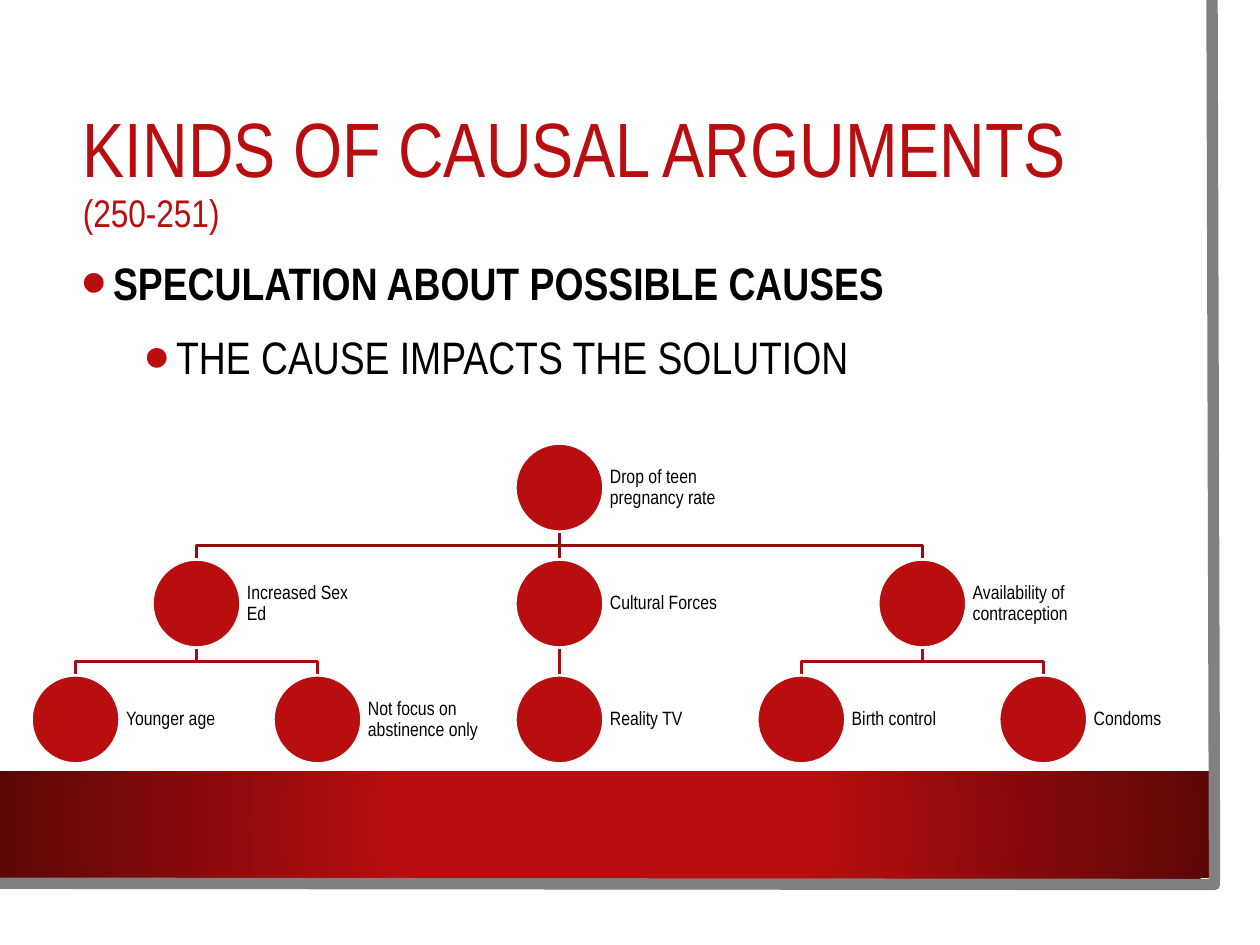
import pptx
import pptx.util
import pptx.dml.color
import pptx.enum.shapes
import pptx.enum.text
import pptx.oxml
from lxml import etree

FONT = "Arial Narrow"
RED, DARK_RED, WHITE, GREY, BLACK = "B80E0F", "5C0707", "FFFFFF", "808080", "000000"
TITLE = [("KINDS OF CAUSAL ARGUMENTS ", 44), ("(250-251)", 22)]
POINTS = [("SPECULATION ABOUT POSSIBLE CAUSES", 0.25, True),
          ("THE CAUSE IMPACTS THE SOLUTION", 0.75, False)]
CAUSES = [
    ("Drop of teen pregnancy rate", 2, 0, None),
    ("Increased Sex Ed", 0.5, 1, 0),
    ("Cultural Forces", 2, 1, 0),
    ("Availability of contraception", 3.5, 1, 0),
    ("Younger age", 0, 2, 1),
    ("Not focus on abstinence only", 1, 2, 1),
    ("Reality TV", 2, 2, 2),
    ("Birth control", 3, 2, 3),
    ("Condoms", 4, 2, 3),
]
BRANCH_COLOURS = {1: "930B0C", 2: "A70D0E"}
TREE_LEFT, TREE_TOP = 0.6, 3.52
COLUMN, ROW, CIRCLE, LABEL_WIDTH = 1.92, 0.92, 0.7, 1.05

A = "http://schemas.openxmlformats.org/drawingml/2006/main"
SHAPES = pptx.enum.shapes.MSO_SHAPE
MIDDLE = pptx.enum.text.MSO_ANCHOR.MIDDLE
TOP = pptx.enum.text.MSO_ANCHOR.TOP
inch = pptx.util.Inches

deck = pptx.Presentation()
deck.slide_width, deck.slide_height = inch(10), inch(7.5)
slide = deck.slides.add_slide(deck.slide_layouts[6])


def rgb(colour):
    return pptx.dml.color.RGBColor.from_string(colour)


def stroke(line, colour, width):
    line.color.rgb = rgb(colour)
    line.width = pptx.util.Pt(width)


def solid(kind, left, top, width, height, fill, outline=None):
    body = slide.shapes.add_shape(kind, inch(left), inch(top), inch(width), inch(height))
    body.shadow.inherit = False
    body.fill.solid()
    body.fill.fore_color.rgb = rgb(fill)
    if outline:
        stroke(body.line, outline, 1.5)
    else:
        body.line.fill.background()
    return body


def polyline(points, colour, width):
    pen = slide.shapes.build_freeform(*map(inch, points[0]))
    pen.add_line_segments([(inch(x), inch(y)) for x, y in points[1:]], close=False)
    outline = pen.convert_to_shape()
    outline.shadow.inherit = False
    outline.fill.background()
    stroke(outline.line, colour, width)


def frame(left, top, width, height, anchor, side=0.1):
    text = slide.shapes.add_textbox(inch(left), inch(top), inch(width), inch(height)).text_frame
    text.word_wrap = True
    text.vertical_anchor = anchor
    text.margin_left = text.margin_right = inch(side)
    return text


def style(run, size, colour, bold=False):
    run.font.name, run.font.size, run.font.bold = FONT, pptx.util.Pt(size), bold
    run.font.color.rgb = rgb(colour)


def bullet(paragraph, indent):
    props = paragraph._p.get_or_add_pPr()
    props.set("marL", str(inch(indent)))
    props.set("indent", str(-inch(0.25)))
    for xml in (f'<a:buClr xmlns:a="{A}"><a:srgbClr val="{RED}"/></a:buClr>',
                f'<a:buSzPct xmlns:a="{A}" val="160000"/>',
                f'<a:buFont xmlns:a="{A}" typeface="Arial"/>',
                f'<a:buChar xmlns:a="{A}" char="•"/>'):
        props.append(pptx.oxml.parse_xml(xml))


def radial(body, inner, outer):
    body.fill.gradient()
    gradient = body._element.spPr.find(f"{{{A}}}gradFill")
    for child in list(gradient):
        gradient.remove(child)
    stops = etree.SubElement(gradient, f"{{{A}}}gsLst")
    for position, colour in ((34, inner), (100, outer)):
        stop = etree.SubElement(stops, f"{{{A}}}gs", pos=str(position * 1000))
        etree.SubElement(stop, f"{{{A}}}srgbClr", val=colour)
    spread = etree.SubElement(gradient, f"{{{A}}}path", {"path": "circle"})
    etree.SubElement(spread, f"{{{A}}}fillToRect", {side: "50000" for side in "ltrb"})


def branch(parent, child, colour):
    (x1, y1), (x2, y2) = parent, child
    if x1 != x2:
        bend = (y1 + y2) / 2
        polyline([parent, (x1, bend), (x2, bend), child], colour, 1.5)
        return
    stem = slide.shapes.add_connector(pptx.enum.shapes.MSO_CONNECTOR.STRAIGHT,
                                      *map(inch, (x1, y1, x2, y2)))
    stroke(stem.line, colour, 1.5)
    etree.SubElement(stem._element.spPr, f"{{{A}}}effectLst")


solid(SHAPES.RECTANGLE, 0, 0, 9.83, 7.27, WHITE)
band = solid(SHAPES.RECTANGLE, 0, 6.12, 9.6, 0.85, RED)
radial(band, RED, DARK_RED)
polyline([(9.62, 0), (9.64, 7.02), (-0.02, 7.01)], GREY, 6.5)

heading = frame(0.56, 0.75, 8.53, 1.26, MIDDLE).paragraphs[0]
heading.text = "\v".join(words for words, _ in TITLE)
heading.line_spacing = 0.9
for run, (_, size) in zip(heading.runs, TITLE):
    style(run, size, RED)

argument = frame(0.55, 1.89, 8.53, 1.3, TOP)
argument.text = "\n".join(words for words, _, _ in POINTS)
for paragraph, (_, indent, bold) in zip(argument.paragraphs, POINTS):
    bullet(paragraph, indent)
    paragraph.line_spacing = 1.2
    style(paragraph.runs[0], 26, BLACK, bold)
argument.paragraphs[1].space_before = pptx.util.Pt(5)

spots = [(TREE_LEFT + column * COLUMN, TREE_TOP + row * ROW) for _, column, row, _ in CAUSES]
for (_, _, row, parent), (x, y) in zip(CAUSES, spots):
    if parent is not None:
        above_x, above_y = spots[parent]
        branch((above_x, above_y + CIRCLE), (x, y), BRANCH_COLOURS[row])

for (words, *_), (x, y) in zip(CAUSES, spots):
    solid(SHAPES.OVAL, x - CIRCLE / 2, y, CIRCLE, CIRCLE, RED, WHITE)
    label = frame(x + CIRCLE / 2, y, LABEL_WIDTH, CIRCLE, MIDDLE, 0.05)
    label.text = words
    label.paragraphs[0].line_spacing = 0.9
    style(label.paragraphs[0].runs[0], 11, BLACK)

deck.save("out.pptx")
